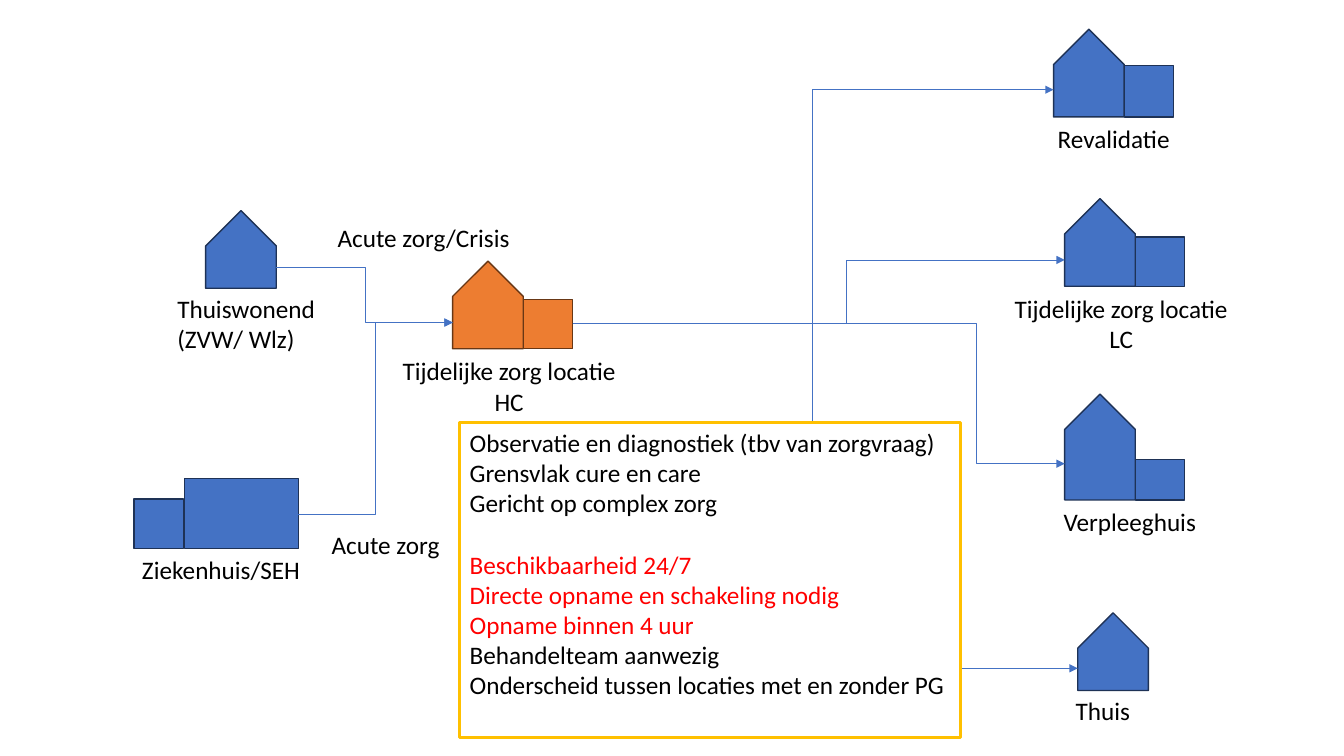
from pptx import Presentation
from pptx.dml.color import RGBColor
from pptx.enum.shapes import MSO_CONNECTOR as Connector, MSO_SHAPE as Shape
from pptx.enum.text import MSO_ANCHOR as Anchor, PP_ALIGN as Align
from pptx.oxml import parse_xml
from pptx.oxml.ns import nsdecls, qn
from pptx.util import Inches, Pt

THEME = {
    "font": "Calibri",
    "size": Pt(18),
    "text": RGBColor.from_string("000000"),
    "urgent": RGBColor.from_string("FF0000"),
    "paper": RGBColor.from_string("FFFFFF"),
    "frame": RGBColor.from_string("FFC000"),
    "blue": RGBColor.from_string("4472C4"),
    "blue_edge": RGBColor.from_string("1E3256"),
    "orange": RGBColor.from_string("ED7D31"),
    "orange_edge": RGBColor.from_string("683715"),
}

deck = Presentation()
deck.slide_width, deck.slide_height = Inches(13.33), Inches(7.5)
slide = deck.slides.add_slide(deck.slide_layouts[6])
shapes = slide.shapes


def add_block(kind, left, top, width, height, fill="blue", edge="blue_edge", weight=1):
    block = shapes.add_shape(kind, Inches(left), Inches(top), Inches(width), Inches(height))
    block.shadow.inherit = False
    block.fill.solid()
    block.fill.fore_color.rgb = THEME[fill]
    block.line.color.rgb = THEME[edge]
    block.line.width = Pt(weight)
    return block


def write(frame, lines, align=Align.LEFT, wrap=False):
    for index, (text, color, gap) in enumerate(lines):
        paragraph = frame.paragraphs[0] if index == 0 else frame.add_paragraph()
        paragraph.alignment = align
        paragraph.space_before = Pt(gap)
        run = paragraph.add_run()
        run.text = text
        run.font.color.rgb = THEME[color]
        for name, value in {"name": THEME["font"], "size": THEME["size"]}.items():
            setattr(run.font, name, value)
    for name, value in {"word_wrap": wrap, "vertical_anchor": Anchor.TOP}.items():
        setattr(frame, name, value)


# Houses: left, top, height, annex height, colour
HOUSE_WIDTH, ANNEX_WIDTH = 0.7, 0.49
houses = [
    (4.49, 2.59, 0.87, 0.49, "orange"),
    (10.45, 0.29, 0.87, 0.51, "blue"),
    (10.56, 1.97, 0.87, 0.49, "blue"),
    (2.04, 2.09, 0.77, 0, "blue"),
    (10.56, 3.91, 1.05, 0.4, "blue"),
    (10.69, 6.08, 0.77, 0, "blue"),
]
for left, top, height, annex, color in houses:
    # A pentagon lying on its side, turned about its centre to stand upright
    shift = (height - HOUSE_WIDTH) / 2
    house = add_block(Shape.PENTAGON, left - shift, top + shift, height, HOUSE_WIDTH,
                      color, color + "_edge")
    house.rotation = 270
    if annex:
        add_block(Shape.RECTANGLE, left + HOUSE_WIDTH, top + height - annex,
                  ANNEX_WIDTH, annex, color, color + "_edge")

# Hospital
add_block(Shape.RECTANGLE, 1.83, 4.75, 1.13, 0.69)
add_block(Shape.RECTANGLE, 1.33, 4.95, ANNEX_WIDTH, 0.49)

# Labels: left, top, width, lines, alignment, wrap
labels = [
    (3.88, 3.48, 2.34, ["Tijdelijke zorg locatie", "HC"], Align.CENTER, False),
    (1.31, 5.45, 1.79, ["Ziekenhuis/SEH"], Align.LEFT, False),
    (10.37, 1.17, 1.33, ["Revalidatie"], Align.RIGHT, False),
    (9.95, 2.86, 2.34, ["Tijdelijke zorg locatie", "LC"], Align.CENTER, False),
    (1.66, 2.86, 1.65, ["Thuiswonend", "(ZVW/ Wlz)"], Align.LEFT, True),
    (3.25, 2.16, 1.93, ["Acute zorg/Crisis"], Align.LEFT, False),
    (3.19, 5.2, 1.28, ["Acute zorg"], Align.LEFT, False),
    (10.45, 4.97, 1.65, ["Verpleeghuis"], Align.LEFT, True),
    (10.57, 6.85, 1.65, ["Thuis"], Align.LEFT, True),
]
for left, top, width, lines, align, wrap in labels:
    label = shapes.add_textbox(Inches(left), Inches(top), Inches(width),
                               Inches(0.1 + 0.3 * len(lines)))
    write(label.text_frame, [(line, "text", 0) for line in lines], align, wrap)

# Routes: start, end, x of the bend
temporary_in, temporary_out = (4.49, 3.2), (5.68, 3.21)
routes = [
    ((2.74, 2.65), temporary_in, 3.62),
    ((2.96, 5.1), temporary_in, 3.72),
    (temporary_out, (10.45, 0.89), 8.06),
    (temporary_out, (10.56, 2.58), 8.4),
    (temporary_out, (10.56, 4.6), 9.68),
    (temporary_out, (10.69, 6.63), 8.06),
]
for start, end, bend in routes:
    route = shapes.add_connector(Connector.ELBOW, *map(Inches, start + end))
    route.line.color.rgb = THEME["blue"]
    route.line.width = Pt(0.5)
    properties = route.element.spPr
    share = round((bend - start[0]) / (end[0] - start[0]) * 100000)
    geometry = properties.find(qn("a:prstGeom"))
    for old in list(geometry):
        geometry.remove(old)
    geometry.append(parse_xml(
        f'<a:avLst {nsdecls("a")}><a:gd name="adj1" fmla="val {share}"/></a:avLst>'))
    properties.find(qn("a:ln")).append(parse_xml(f'<a:tailEnd {nsdecls("a")} type="triangle"/>'))
    properties.append(parse_xml(f'<a:effectLst {nsdecls("a")}/>'))

# Description of the temporary care location
description = add_block(Shape.RECTANGLE, 4.56, 4.19, 4.97, 3.13, "paper", "frame", 2.25)
write(description.text_frame, [
    ("Observatie en diagnostiek (tbv van zorgvraag)", "text", 0),
    ("Grensvlak cure en care", "text", 0),
    ("Gericht op complex zorg", "text", 0),
    ("Beschikbaarheid 24/7", "urgent", 22),
    ("Directe opname en schakeling nodig", "urgent", 0),
    ("Opname binnen 4 uur", "urgent", 0),
    ("Behandelteam aanwezig", "text", 0),
    ("Onderscheid tussen locaties met en zonder PG", "text", 0),
])

deck.save("out.pptx")
